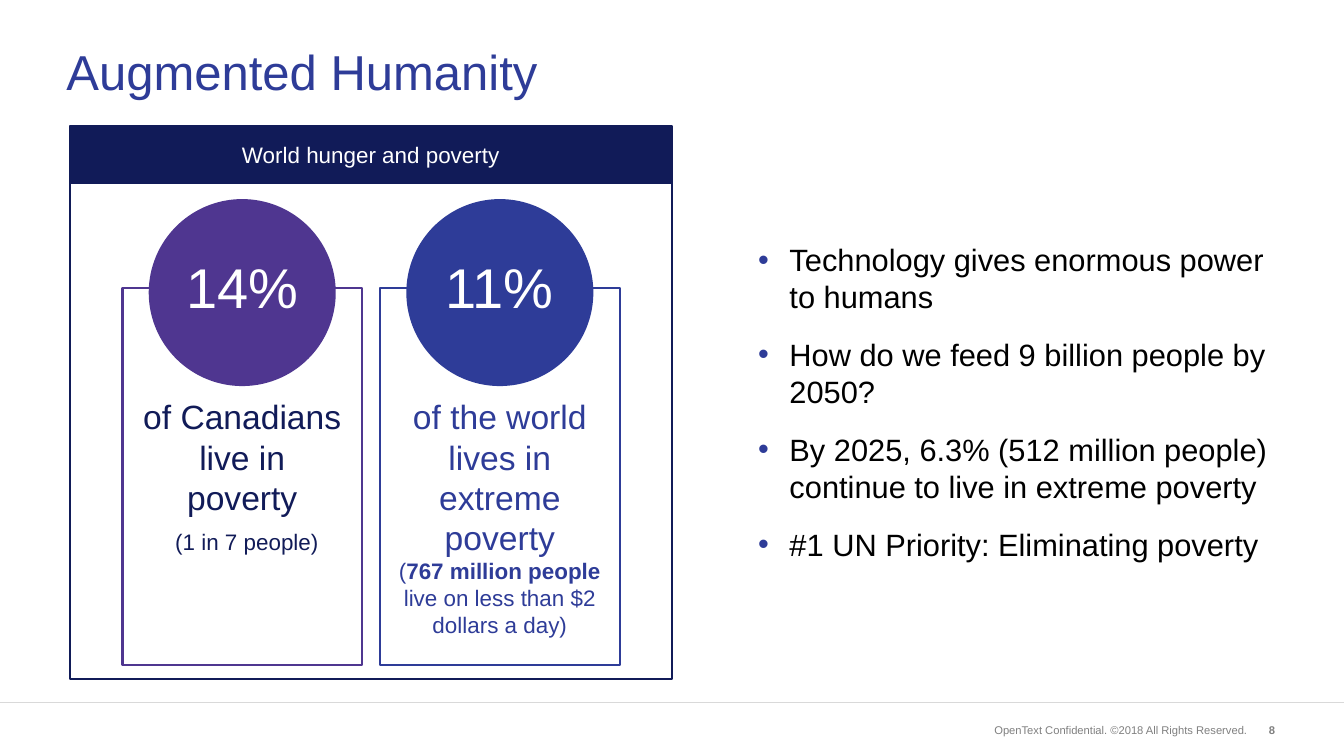
from lxml import etree
from pptx import Presentation
from pptx.dml.color import RGBColor
from pptx.enum.shapes import MSO_CONNECTOR, MSO_SHAPE
from pptx.enum.text import MSO_ANCHOR, PP_ALIGN
from pptx.oxml.ns import qn
from pptx.util import Pt

NAVY = RGBColor(0x11, 0x1B, 0x58)
BLUE = RGBColor(0x2E, 0x3C, 0x98)
PURPLE = RGBColor(0x4F, 0x36, 0x90)
GREY = RGBColor(0x80, 0x80, 0x80)
LIGHT_GREY = RGBColor(0xD9, 0xD9, 0xD9)
WHITE = RGBColor(0xFF, 0xFF, 0xFF)
BLACK = RGBColor(0x00, 0x00, 0x00)

RECTANGLE, OVAL = MSO_SHAPE.RECTANGLE, MSO_SHAPE.OVAL
STRAIGHT = MSO_CONNECTOR.STRAIGHT
TOP, MIDDLE = MSO_ANCHOR.TOP, MSO_ANCHOR.MIDDLE
LEFT, CENTER, RIGHT = PP_ALIGN.LEFT, PP_ALIGN.CENTER, PP_ALIGN.RIGHT

FONT = "Arial"
SLIDE_WIDTH, SLIDE_HEIGHT = 1919.52, 1080
PANEL_LEFT, PANEL_TOP, PANEL_WIDTH, PANEL_HEIGHT = 99.36, 180, 860.4, 790.56
HEADER_HEIGHT = 82.8
CARD_LEFT, CARD_TOP, CARD_WIDTH, CARD_HEIGHT = 174.96, 411.84, 342, 537.84
CARD_STEP = 367.92
CIRCLE_TOP, CIRCLE_SIZE = 284.4, 267.12
BULLET_INDENT = 44.64
BREAK = "\n"

# Each card: colour, text colour, figure, text width, paragraphs of (text, size, bold) runs
CARDS = [
    (PURPLE, NAVY, "14%", 288.72, [
        [("of Canadians live in poverty", 48, False)],
        [(" ", 48, False), ("(1 in 7 people)", 32, False)],
    ]),
    (BLUE, BLUE, "11%", 302.4, [
        [("of the world lives in extreme poverty", 48, False), (BREAK, 48, False),
         ("(", 32, False), ("767 million people", 32, True),
         (" live on less than $2 dollars a day)", 32, False)],
    ]),
]

BULLETS = [
    "Technology gives enormous power to humans",
    "How do we feed 9 billion people by 2050?",
    "By 2025, 6.3% (512 million people) continue to live in extreme poverty",
    "#1 UN Priority: Eliminating poverty",
]


def set_attributes(target, values):
    for name, value in values.items():
        setattr(target, name, value)


def add_runs(paragraph, runs, color):
    for text, size, bold in runs:
        if text == BREAK:
            paragraph.add_line_break()
            continue
        run = paragraph.add_run()
        run.text = text
        set_attributes(run.font, {"name": FONT, "size": Pt(size), "bold": bold})
        run.font.color.rgb = color


def fill_text(shape, paragraphs, color, align=LEFT, anchor=TOP, margins=(7.2, 3.6), spacing=None):
    """Write paragraphs, each a list of (text, size, bold) runs."""
    frame = shape.text_frame
    horizontal, vertical = map(Pt, margins)
    set_attributes(frame, {
        "word_wrap": True, "vertical_anchor": anchor,
        "margin_left": horizontal, "margin_right": horizontal,
        "margin_top": vertical, "margin_bottom": vertical,
    })
    for index, runs in enumerate(paragraphs):
        paragraph = frame.add_paragraph() if index else frame.paragraphs[0]
        set_attributes(paragraph, {"alignment": align, "line_spacing": spacing})
        add_runs(paragraph, runs, color)
    return frame


def add_text(slide, box, paragraphs, color, **layout):
    return fill_text(slide.shapes.add_textbox(*map(Pt, box)), paragraphs, color, **layout)


def add_box(slide, kind, box, fill=None, line=None):
    shape = slide.shapes.add_shape(kind, *map(Pt, box))
    shape.shadow.inherit = False
    if fill is None:
        shape.fill.background()
    else:
        shape.fill.solid()
        shape.fill.fore_color.rgb = fill
    if line is None:
        shape.line.fill.background()
    else:
        shape.line.color.rgb = line
        shape.line.width = Pt(3)
    return shape


def add_rule(slide, top):
    rule = slide.shapes.add_connector(STRAIGHT, Pt(0), Pt(top), Pt(SLIDE_WIDTH), Pt(top))
    rule.line.color.rgb = LIGHT_GREY
    rule.line.width = Pt(1)
    etree.SubElement(rule._element.spPr, qn("a:effectLst"))


def add_bullet(paragraph, color):
    properties = paragraph._p.get_or_add_pPr()
    properties.set("marL", str(Pt(BULLET_INDENT)))
    properties.set("indent", str(-Pt(BULLET_INDENT)))
    bullet_color = etree.SubElement(properties, qn("a:buClr"))
    etree.SubElement(bullet_color, qn("a:srgbClr"), val=str(color))
    etree.SubElement(properties, qn("a:buFont"), typeface=FONT)
    etree.SubElement(properties, qn("a:buChar"), char="•")


def add_bullet_list(slide, box, items):
    frame = add_text(slide, box, [[(item, 44, False)] for item in items], BLACK,
                     anchor=MIDDLE, margins=(14.4, 14.4))
    for index, paragraph in enumerate(frame.paragraphs):
        if index:
            paragraph.space_before = Pt(30)
        add_bullet(paragraph, BLUE)


def add_card(slide, left, color, text_color, figure, text_width, paragraphs):
    center = left + CARD_WIDTH / 2
    add_box(slide, RECTANGLE, (left, CARD_TOP, CARD_WIDTH, CARD_HEIGHT), line=color)
    add_box(slide, OVAL, (center - CIRCLE_SIZE / 2, CIRCLE_TOP, CIRCLE_SIZE, CIRCLE_SIZE), fill=color)
    add_text(slide, (center - 163.44, 357.84, 326.88, 104.4), [[(figure, 80, False)]],
             WHITE, align=CENTER)
    add_text(slide, (center - text_width / 2, 564.48, text_width, 351.36), paragraphs,
             text_color, align=CENTER, margins=(2.88, 1.44))


def add_panel(slide):
    add_box(slide, RECTANGLE, (PANEL_LEFT, PANEL_TOP, PANEL_WIDTH, PANEL_HEIGHT), line=NAVY)
    header = add_box(slide, RECTANGLE, (PANEL_LEFT, PANEL_TOP, PANEL_WIDTH, HEADER_HEIGHT), fill=NAVY)
    fill_text(header, [[("World hunger and poverty", 32, False)]], WHITE,
              align=CENTER, anchor=MIDDLE)


def add_footer(slide):
    add_rule(slide, 1003.68)
    add_text(slide, (1362.24, 1028.88, 426.24, 26.64),
             [[("OpenText Confidential. ©2018 All Rights Reserved.", 16, False)]],
             GREY, align=RIGHT, anchor=MIDDLE)
    add_text(slide, (1776.96, 1029.6, 51.12, 26.64), [[("8", 16, True)]], GREY, align=RIGHT)


def main():
    presentation = Presentation()
    set_attributes(presentation, {"slide_width": Pt(SLIDE_WIDTH), "slide_height": Pt(SLIDE_HEIGHT)})
    slide = presentation.slides.add_slide(presentation.slide_layouts[6])

    # Footer and title
    add_footer(slide)
    add_text(slide, (87.84, 27.36, 1733.76, 153.36), [[("Augmented Humanity", 70, False)]],
             BLUE, anchor=MIDDLE, spacing=Pt(80))

    # Poverty panel with its two cards
    add_panel(slide)
    for index, card in enumerate(CARDS):
        add_card(slide, CARD_LEFT + index * CARD_STEP, *card)

    # Key points
    add_bullet_list(slide, (1068.48, 225.36, 778.32, 696.96), BULLETS)

    presentation.save("out.pptx")


if __name__ == "__main__":
    main()
